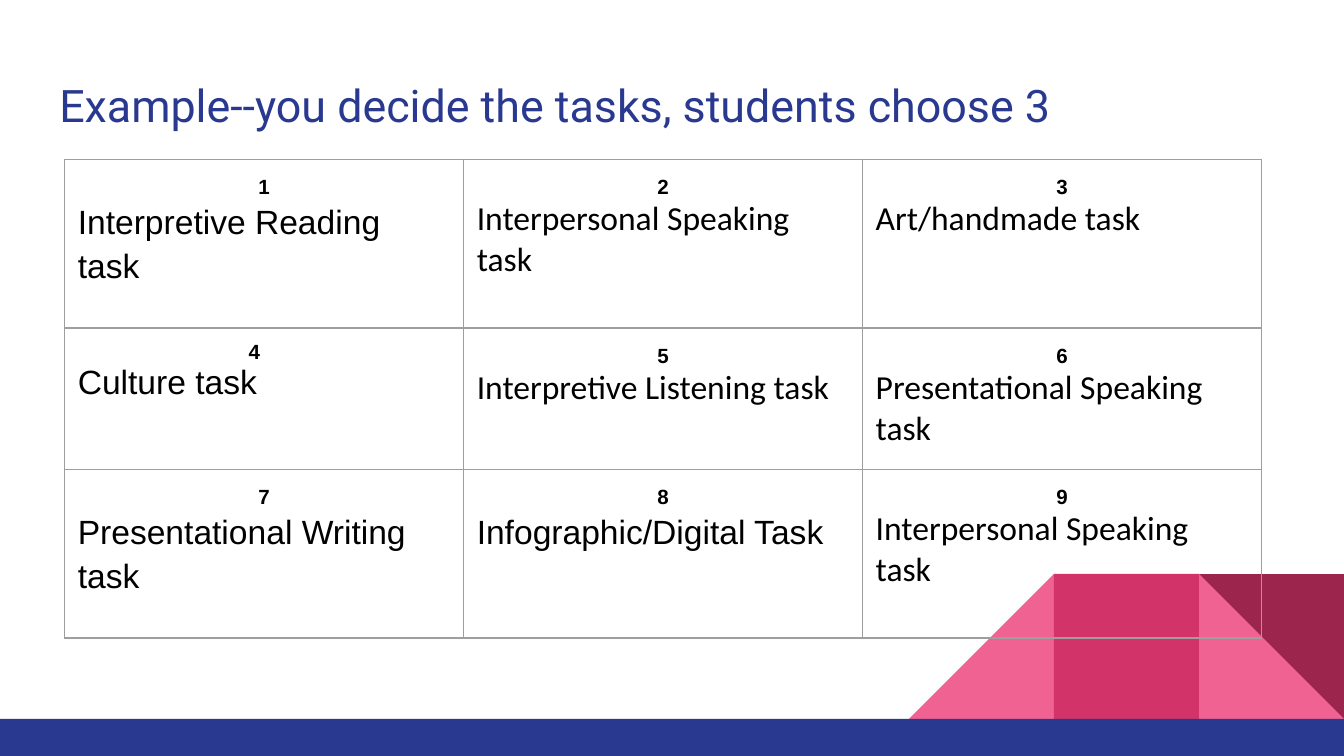
from lxml.etree import SubElement
from pptx import Presentation
from pptx.dml.color import RGBColor
from pptx.enum.shapes import MSO_SHAPE
from pptx.enum.text import MSO_ANCHOR, MSO_AUTO_SIZE, PP_ALIGN
from pptx.oxml.ns import qn
from pptx.util import Cm, Pt

NAVY, PINK, ROSE, WINE = "2A3990", "F06292", "D23369", "9C254D"
BLACK, GRAY = "000000", "9E9E9E"
TASKS = [
    ("Interpretive Reading task", "Arial"),
    ("Interpersonal Speaking task", "Calibri"),
    ("Art/handmade task", "Calibri"),
    ("Culture task", "Arial"),
    ("Interpretive Listening task", "Calibri"),
    ("Presentational Speaking task", "Calibri"),
    ("Presentational Writing task", "Arial"),
    ("Infographic/Digital Task", "Arial"),
    ("Interpersonal Speaking task", "Calibri"),
]
INDENTED_NUMBER = 4


def color(value):
    return RGBColor.from_string(value)


class ChoiceBoard:
    """Holds the style and the current slide, and draws each kind of element."""

    margin = Cm(0.25)
    spacing = 1.15

    def __init__(self, deck):
        self.slide = deck.slides.add_slide(deck.slide_layouts[5])

    def set_font(self, para, name, size, value, bold=False):
        font = para.font
        font.name, font.size, font.bold = name, Pt(size), bold
        font.color.rgb = color(value)

    def set_margins(self, holder):
        holder.margin_left = holder.margin_right = self.margin
        holder.margin_top = holder.margin_bottom = self.margin

    def title(self, text, left, top, width, height):
        box = self.slide.shapes.title
        box.left, box.top, box.width, box.height = map(Cm, (left, top, width, height))
        frame = box.text_frame
        frame.text = text
        frame.auto_size = MSO_AUTO_SIZE.NONE
        frame.vertical_anchor = MSO_ANCHOR.MIDDLE
        self.set_margins(frame)
        para = frame.paragraphs[0]
        para.alignment = PP_ALIGN.LEFT
        self.set_font(para, "Roboto", 24, NAVY)

    def shape(self, kind, left, top, width, height, fill, rotation=0):
        shape = self.slide.shapes.add_shape(kind, *map(Cm, (left, top, width, height)))
        shape.shadow.inherit = False
        shape.fill.solid()
        shape.fill.fore_color.rgb = color(fill)
        shape.line.fill.background()
        shape.rotation = rotation

    def borders(self, cell):
        properties = cell._tc.get_or_add_tcPr()
        for side in ("a:lnL", "a:lnR", "a:lnT", "a:lnB"):
            line = SubElement(properties, qn(side), w=str(Pt(0.75)))
            SubElement(SubElement(line, qn("a:solidFill")), qn("a:srgbClr"), val=GRAY)

    def cell(self, cell, number, task, font):
        self.borders(cell)
        cell.fill.background()
        self.set_margins(cell)
        cell.text = f"{number}\n{task}"
        heading, label = cell.text_frame.paragraphs
        self.set_font(heading, "Arial", 11, BLACK, bold=True)
        self.set_font(label, font, 18, BLACK)
        if number == INDENTED_NUMBER:
            heading._p.get_or_add_pPr().set("marL", str(Cm(3.23)))
            return
        heading.alignment = PP_ALIGN.CENTER
        heading.line_spacing = self.spacing
        if font == "Arial":
            label.line_spacing = self.spacing

    def table(self, left, top, column_width, row_heights, tasks):
        rows = len(row_heights)
        columns = len(tasks) // rows
        size = (left, top, columns * column_width, sum(row_heights))
        table = self.slide.shapes.add_table(rows, columns, *map(Cm, size)).table
        table.first_row = table.horz_banding = False
        for column in table.columns:
            column.width = Cm(column_width)
        for row, height in zip(table.rows, row_heights):
            row.height = Cm(height)
        for index, (task, font) in enumerate(tasks):
            self.cell(table.cell(*divmod(index, columns)), index + 1, task, font)


def main():
    deck = Presentation()
    deck.slide_width, deck.slide_height = Cm(25.4), Cm(14.29)
    board = ChoiceBoard(deck)

    side, bar_top = 2.74, 13.59
    triangle, rectangle = MSO_SHAPE.RIGHT_TRIANGLE, MSO_SHAPE.RECTANGLE
    for kind, step, fill, rotation in (
        (triangle, 1, PINK, 0),
        (triangle, 3, PINK, 270),
        (rectangle, 2, ROSE, 0),
        (triangle, 1, WINE, 180),
    ):
        board.shape(kind, 25.4 - step * side, bar_top - side, side, side, fill, rotation)
    board.shape(rectangle, 0, bar_top, 25.4, 0.7, NAVY)

    board.title("Example--you decide the tasks, students choose 3", 0.87, 1.14, 23.67, 1.68)
    board.table(1.22, 3.01, 7.54, (3.19, 2.67, 3.19), TASKS)
    deck.save("out.pptx")


if __name__ == "__main__":
    main()
